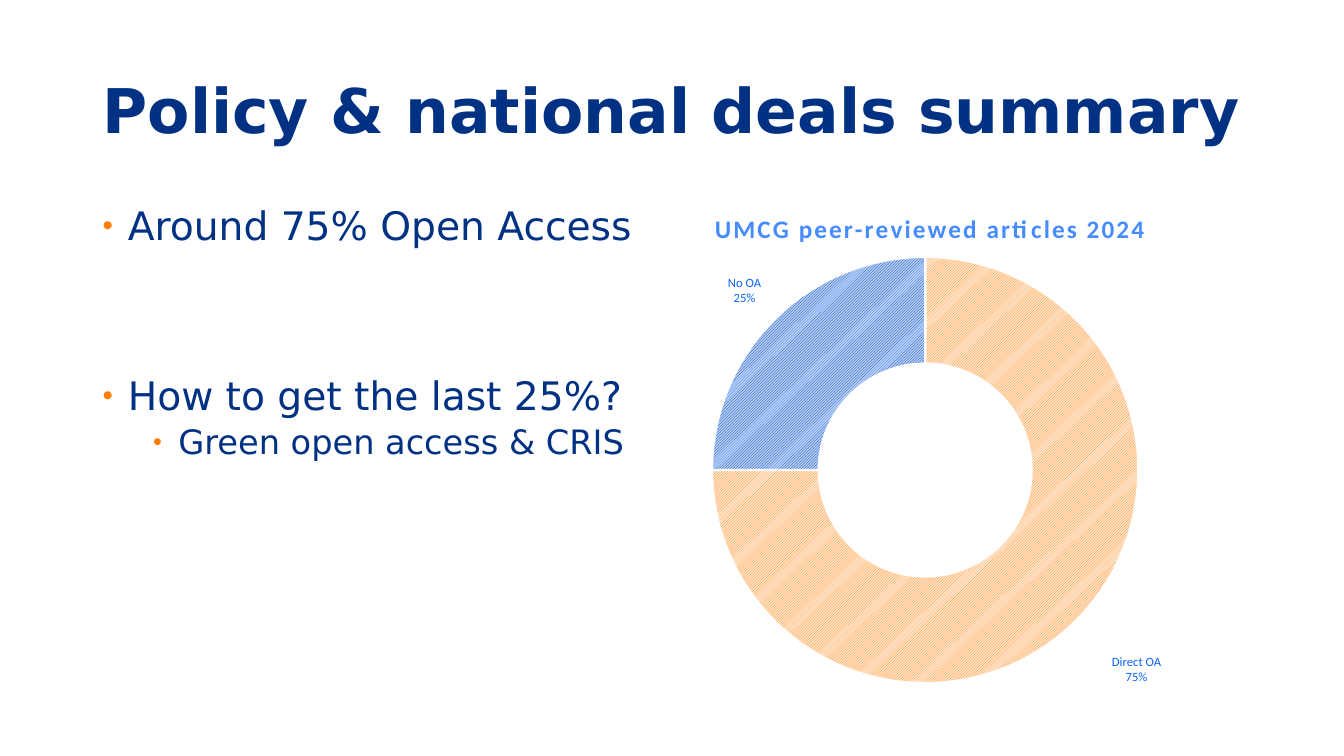
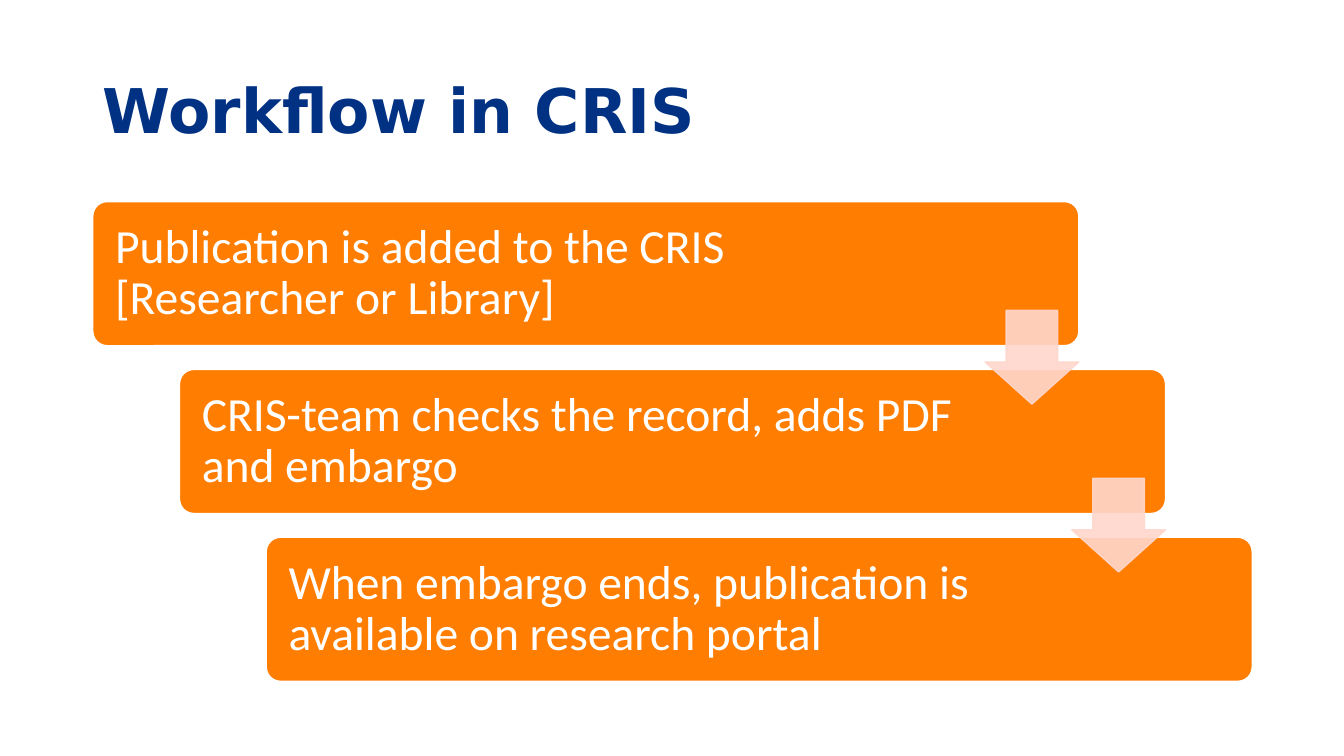
from copy import deepcopy

from pptx import Presentation, util as u
from pptx.chart import data
from pptx.dml import color
from pptx.enum import chart as ch, dml, shapes, text
from pptx.oxml import ns, xmlchemy as xc

Inches, Pt, RGB = u.Inches, u.Pt, color.RGBColor
NAVY = RGB(0x00, 0x31, 0x83)
ORANGE = RGB(0xFF, 0x7D, 0x00)
PEACH = RGB(0xFF, 0xE5, 0xCC)
PINK = RGB(0xFF, 0xD7, 0xCC)
SKY = RGB(0xB3, 0xD0, 0xFF)
BLUE = RGB(0x09, 0x65, 0xFF)
AZURE = RGB(0x46, 0x8B, 0xFF)
WHITE = RGB(0xFF, 0xFF, 0xFF)
HEAD, BODY = "DejaVu Sans", "Calibri"


def style(font, face, size, tint, bold=False):
    font.name, font.size, font.bold = face, Pt(size), bold
    font.color.rgb = tint


def write(para, words, face, size, tint, bold=False):
    run = para.add_run()
    run.text = words
    style(run.font, face, size, tint, bold)
    return run


def node(tag, **attrs):
    item = xc.OxmlElement(tag)
    for key, val in attrs.items():
        item.set(key, str(val))
    return item


def add_slide(deck, title):
    slide = deck.slides.add_slide(deck.slide_layouts[5])
    head = slide.shapes.title
    head.left, head.top = Inches(0.92), Inches(0.4)
    head.width, head.height = Inches(11.5), Inches(1.45)
    frame = head.text_frame
    frame.auto_size = text.MSO_AUTO_SIZE.NONE
    frame.vertical_anchor = text.MSO_ANCHOR.MIDDLE
    para = frame.paragraphs[0]
    para.alignment, para.line_spacing = text.PP_ALIGN.LEFT, 0.9
    write(para, title, HEAD, 44, NAVY, True)
    return slide


def add_list(slide, box, items):
    frame = slide.shapes.add_textbox(*map(Inches, box)).text_frame
    frame.word_wrap = True
    for i, (words, level, size, gap) in enumerate(items):
        para = frame.add_paragraph() if i else frame.paragraphs[0]
        para.level, para.line_spacing, para.space_before = level, 0.9, Pt(gap)
        props = para._p.get_or_add_pPr()
        props.set("marL", str(Inches(0.25 + 0.5 * level)))
        props.set("indent", str(Inches(-0.25)))
        tint = node("a:buClr")
        tint.append(node("a:srgbClr", val=ORANGE))
        props.extend([tint, node("a:buSzPct", val=75000),
                      node("a:buFont", typeface="Arial"),
                      node("a:buChar", char="•")])
        write(para, words, HEAD, size, NAVY)


def set_place(owner, index, **sizes):
    place = owner.find(ns.qn("c:layout"))
    if place is None:
        place = node("c:layout")
        owner.insert(index, place)
    for old in list(place):
        place.remove(old)
    manual = node("c:manualLayout")
    place.append(manual)
    for key, val in sizes.items():
        manual.append(node("c:" + key, val=val))


def place_labels(labels, shifts):
    group = labels._element
    for old in group.findall(ns.qn("c:showLeaderLines")):
        group.remove(old)
    split = node("c:separator")
    split.text = "\n"
    group.append(split)
    shared = list(group)
    group.append(node("c:showLeaderLines", val=0))
    for i, (x, y) in enumerate(shifts):
        label = node("c:dLbl")
        label.append(node("c:idx", val=i))
        set_place(label, 1, x=x, y=y)
        label.extend([deepcopy(part) for part in shared])
        group.insert(i, label)


def add_ring(slide, box, title, shares, fills, shifts):
    source = data.CategoryChartData()
    source.categories = list(shares)
    source.add_series("Series 1", list(shares.values()))
    chart = slide.shapes.add_chart(
        ch.XL_CHART_TYPE.DOUGHNUT, *map(Inches, box), source).chart
    chart.has_legend = False
    style(chart.font, BODY, 10, NAVY)
    head = chart.chart_title
    run = write(head.text_frame.paragraphs[0], title, BODY, 18, AZURE, True)
    run._r.get_or_add_rPr().set("spc", "150")
    set_place(head._element, 1, xMode="edge", yMode="edge", x=0.15, y=0.04)
    plot = chart.plots[0]
    plot.vary_by_categories = True
    plot._element.find(ns.qn("c:holeSize")).set("val", "70")
    set_place(plot._element.getparent(), 0, layoutTarget="inner",
              xMode="edge", yMode="edge", x=0.153, y=0.138, w=0.693, h=0.834)
    series = plot.series[0]
    for i, (front, back) in enumerate(fills):
        part = series.points[i].format
        part.fill.patterned()
        part.fill.pattern = dml.MSO_PATTERN.LIGHT_UPWARD_DIAGONAL
        part.fill.fore_color.rgb, part.fill.back_color.rgb = front, back
        part.line.color.rgb, part.line.width = WHITE, Pt(1.5)
    labels = series.data_labels
    labels.show_value = False
    labels.show_category_name = labels.show_percentage = True
    labels.number_format, labels.number_format_is_linked = "0%", False
    style(labels.font, BODY, 9, BLUE)
    place_labels(labels, shifts)


def add_block(slide, kind, box, tweaks, tint, edge):
    block = slide.shapes.add_shape(kind, *map(Inches, box))
    for i, val in enumerate(tweaks):
        block.adjustments[i] = val
    block.shadow.inherit = False
    block.fill.solid()
    block.fill.fore_color.rgb = tint
    block.line.color.rgb, block.line.width = edge, Pt(1)
    return block


def add_steps(slide, box, steps):
    left, top, width, height = box
    wide, tall, side = 9.78, 1.43, 0.93
    last = len(steps) - 1
    spots = [(left + i * (width - wide) / last, top + i * (height - tall) / last)
             for i in range(len(steps))]
    for (x, y), words in zip(spots, steps):
        step = add_block(slide, shapes.MSO_SHAPE.ROUNDED_RECTANGLE,
                         (x, y, wide, tall), [0.1], ORANGE, WHITE)
        frame = step.text_frame
        frame.word_wrap = True
        frame.vertical_anchor = text.MSO_ANCHOR.MIDDLE
        frame.margin_left, frame.margin_right = Inches(0.18), Inches(1.98)
        para = frame.paragraphs[0]
        para.alignment, para.line_spacing = text.PP_ALIGN.LEFT, 0.9
        write(para, words, BODY, 34, WHITE)
    for x, y in spots[:-1]:
        arrow = add_block(slide, shapes.MSO_SHAPE.DOWN_ARROW,
                          (x + wide - side, y + 1.08, side, side),
                          [0.55, 0.45], PINK, PINK)
        for tint in arrow._element.spPr.iter(ns.qn("a:srgbClr")):
            tint.append(node("a:alpha", val=90000))


def main():
    deck = Presentation()
    deck.slide_width, deck.slide_height = Inches(13.33), Inches(7.5)

    deals = add_slide(deck, "Policy & national deals summary")
    add_list(deals, (0.92, 2, 5.75, 4.76), [
        ("Around 75% Open Access", 0, 28, 0),
        ("How to get the last 25%?", 0, 28, 91),
        ("Green open access & CRIS", 1, 24, 5),
    ])
    add_ring(deals, (6.13, 1.85, 6.1, 5.07), "UMCG peer-reviewed articles 2024",
             {"Direct OA": 75, "No OA": 25},
             [(ORANGE, PEACH), (NAVY, SKY)],
             [(0.16, 0.17), (-0.11, -0.13)])

    flow = add_slide(deck, "Workflow in CRIS")
    add_steps(flow, (0.92, 2, 11.5, 4.76), [
        "Publication is added to the CRIS [Researcher or Library]",
        "CRIS-team checks the record, adds PDF and embargo",
        "When embargo ends, publication is available on research portal",
    ])
    deck.save("out.pptx")


if __name__ == "__main__":
    main()
